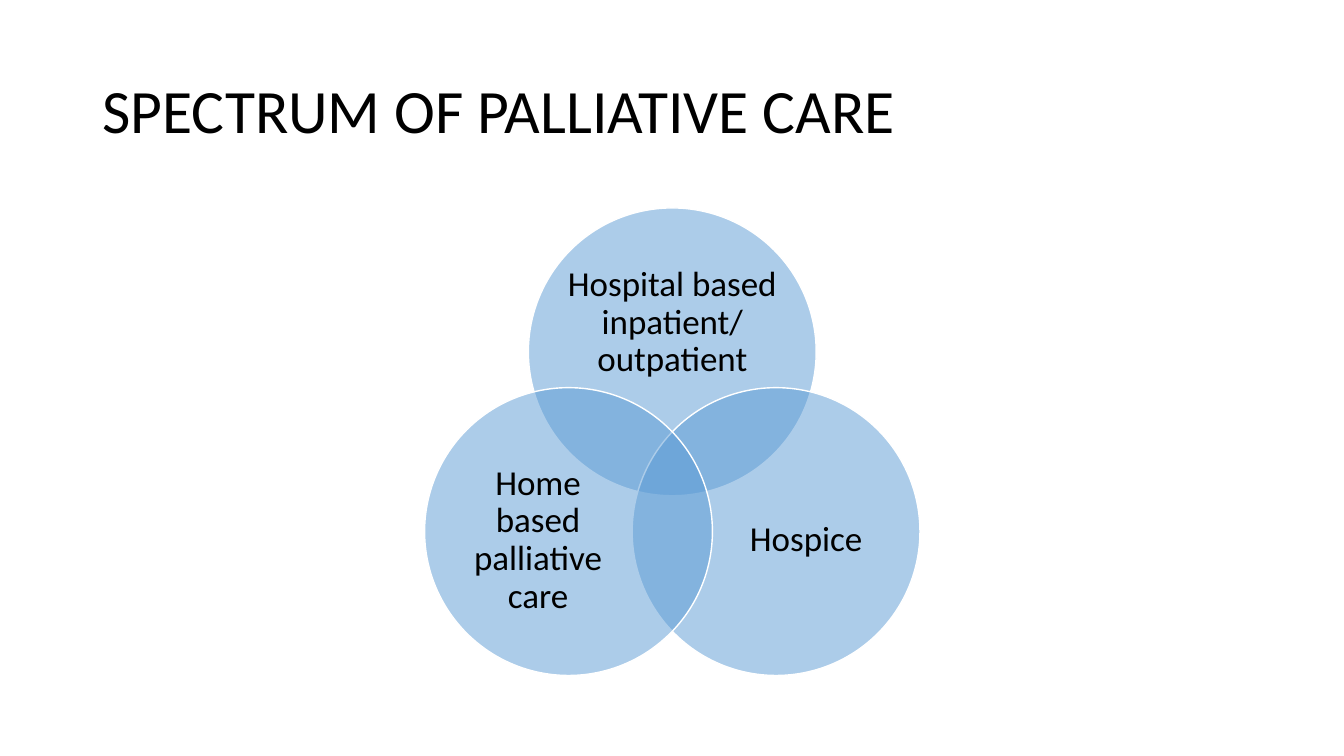
import math

import pptx
import pptx.dml.color
import pptx.enum.shapes
import pptx.enum.text
import pptx.oxml.ns
import pptx.util
from lxml import etree

Pt = pptx.util.Pt
Color = pptx.dml.color.RGBColor
Align = pptx.enum.text.PP_ALIGN
Anchor = pptx.enum.text.MSO_ANCHOR

THEME = {
    "font": "Calibri",
    "title_size": Pt(44),
    "label_size": Pt(25),
    "text": Color(0, 0, 0),
    "circle": Color(0x5B, 0x9B, 0xD5),
    "outline": Color(255, 255, 255),
    "opacity": 50,
}


def apply(target, values):
    for name, value in values.items():
        setattr(target, name, value)


def write_text(shape, text, size, alignment, frame_format):
    frame = shape.text_frame
    frame.text = text
    apply(frame, {"word_wrap": True, "vertical_anchor": Anchor.MIDDLE, **frame_format})
    paragraph = frame.paragraphs[0]
    apply(paragraph, {"alignment": alignment, "line_spacing": 0.9, "space_before": Pt(0)})
    apply(paragraph.font, {"name": THEME["font"], "size": size})
    paragraph.font.color.rgb = THEME["text"]


presentation = pptx.Presentation()
apply(presentation, {"slide_width": Pt(960), "slide_height": Pt(540)})
slide = presentation.slides.add_slide(presentation.slide_layouts[5])

title = slide.shapes.title
apply(title, {"left": Pt(66), "top": Pt(28.75), "width": Pt(828), "height": Pt(104.4)})
write_text(title, "SPECTRUM OF PALLIATIVE CARE", THEME["title_size"], Align.LEFT, {})

center_x, center_y = 480.2, 336.9
orbit, diameter = 85.6, 205.6
no_margins = dict.fromkeys(["margin_left", "margin_top", "margin_right", "margin_bottom"], 0)
settings = [
    ("Hospital based inpatient/ outpatient", (404.9, 184.4, 150.6, 92.4)),
    ("Hospice", (514.2, 329.6, 123.3, 113)),
    ("Home based palliative care", (322.7, 329.6, 123.3, 113)),
]

for index, (label, bounds) in enumerate(settings):
    angle = math.radians(120 * index - 90)
    left = center_x + orbit * math.cos(angle) - diameter / 2
    top = center_y + orbit * math.sin(angle) - diameter / 2
    circle = slide.shapes.add_shape(
        pptx.enum.shapes.MSO_SHAPE.OVAL, Pt(left), Pt(top), Pt(diameter), Pt(diameter)
    )
    circle.shadow.inherit = False
    circle.fill.solid()
    circle.fill.fore_color.rgb = THEME["circle"]
    circle.line.color.rgb = THEME["outline"]
    circle.line.width = Pt(1)
    fill_color = circle.element.spPr.find(pptx.oxml.ns.qn("a:solidFill"))[0]
    alpha = etree.SubElement(fill_color, pptx.oxml.ns.qn("a:alpha"))
    alpha.set("val", str(THEME["opacity"] * 1000))

    caption = slide.shapes.add_textbox(*map(Pt, bounds))
    write_text(caption, label, THEME["label_size"], Align.CENTER, no_margins)

presentation.save("out.pptx")
